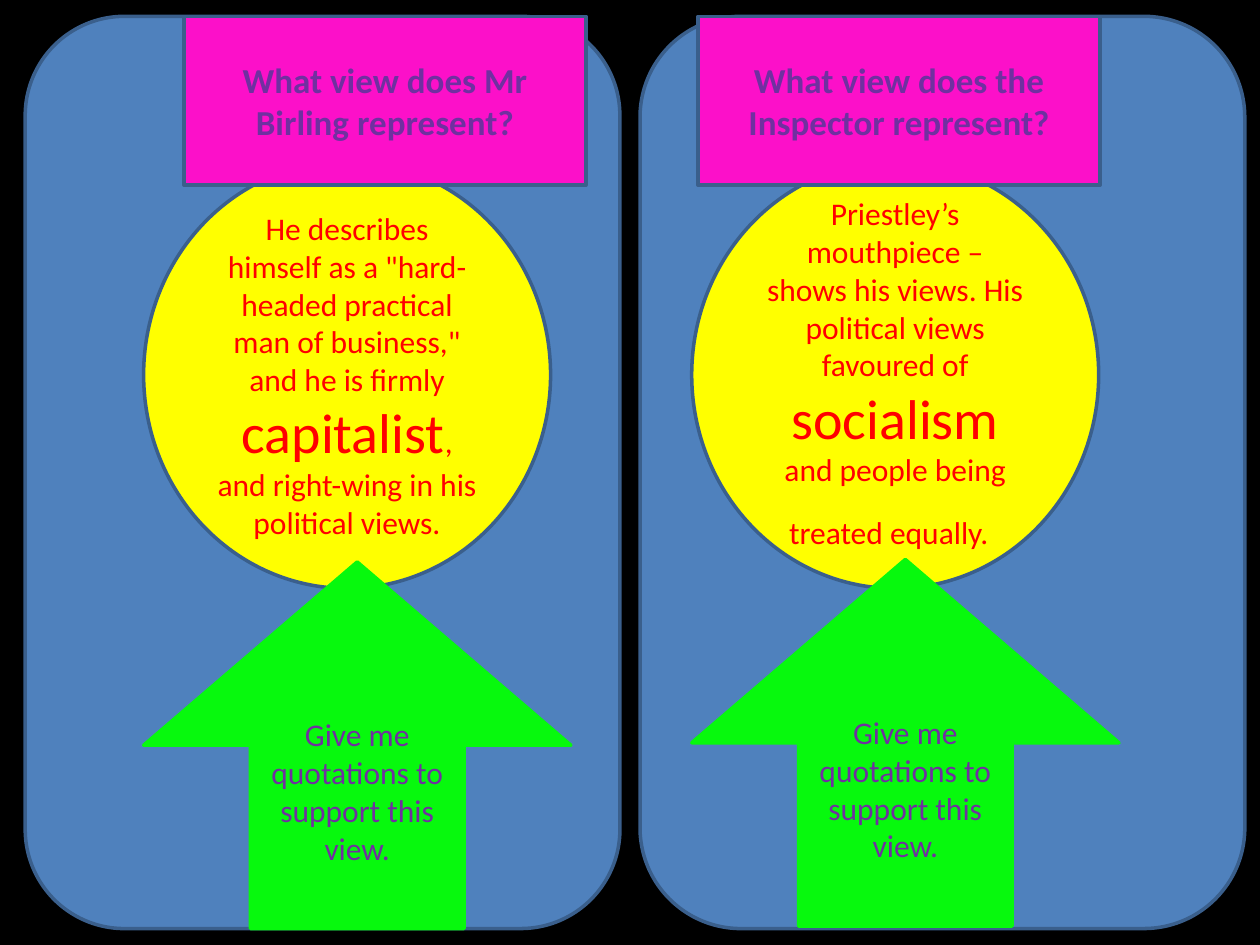
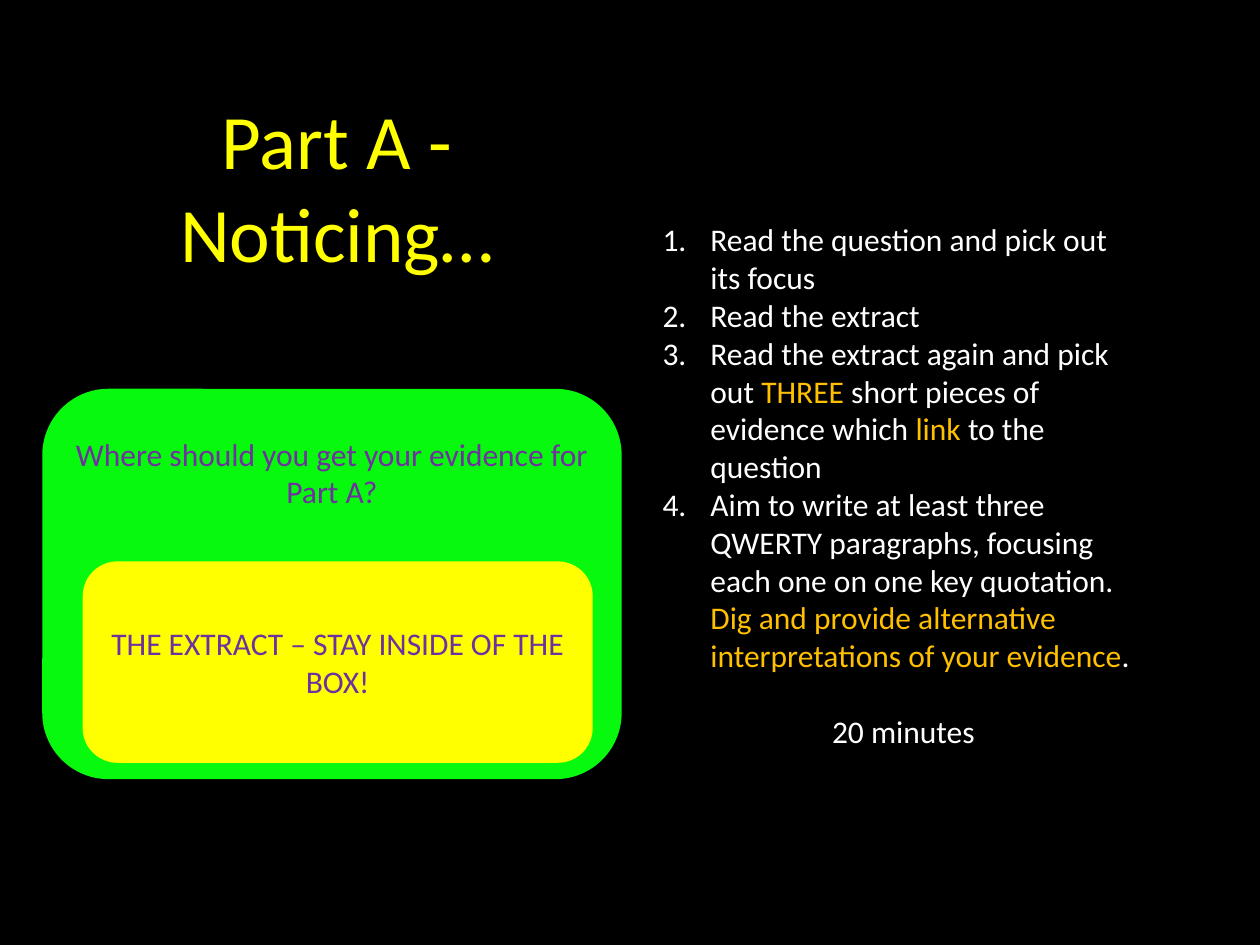
from lxml import etree
from pptx import Presentation
from pptx.dml.color import RGBColor
from pptx.enum.shapes import MSO_SHAPE
from pptx.enum.text import MSO_ANCHOR, PP_ALIGN
from pptx.oxml.ns import qn
from pptx.util import Inches, Pt

ROUND, OVAL = MSO_SHAPE.ROUNDED_RECTANGLE, MSO_SHAPE.OVAL
RECT, UP_ARROW = MSO_SHAPE.RECTANGLE, MSO_SHAPE.UP_ARROW
TOP, MIDDLE = MSO_ANCHOR.TOP, MSO_ANCHOR.MIDDLE
CENTER, LEFT = PP_ALIGN.CENTER, PP_ALIGN.LEFT

FONT = "Calibri"
BLACK, WHITE = "000000", "FFFFFF"
BLUE, OUTLINE = "4F81BD", "3A5F8C"
YELLOW, GREEN, PINK = "FFFF00", "07F90D", "FC10C9"
PURPLE, RED, GOLD = "7030A0", "FF0000", "FFC000"


def rgb(color):
    return RGBColor.from_string(color)


def add_slide(prs):
    s = prs.slides.add_slide(prs.slide_layouts[6])
    s.background.fill.solid()
    s.background.fill.fore_color.rgb = rgb(BLACK)
    return s


def add_run(p, text, color, size=18, bold=False):
    r = p.add_run()
    r.text = text
    r.font.name = FONT
    r.font.size = Pt(size)
    r.font.bold = bold
    r.font.color.rgb = rgb(color)


def add_block(s, kind, box, fill, line=None, anchor=MIDDLE):
    """Add a filled shape and return its one centred paragraph."""
    sp = s.shapes.add_shape(kind, *map(Inches, box))
    sp.shadow.inherit = False
    sp.fill.solid()
    sp.fill.fore_color.rgb = rgb(fill)
    sp.line.color.rgb = rgb(line or fill)
    sp.line.width = Pt(2)
    tf = sp.text_frame
    tf.word_wrap = True
    tf.vertical_anchor = anchor
    p = tf.paragraphs[0]
    p.alignment = CENTER
    return p


def add_text_box(s, box, anchor=TOP):
    tf = s.shapes.add_textbox(*map(Inches, box)).text_frame
    tf.word_wrap = True
    tf.vertical_anchor = anchor
    return tf


def number_paragraph(p):
    pPr = p._p.get_or_add_pPr()
    pPr.set("marL", str(Inches(0.38)))
    pPr.set("indent", str(-Inches(0.38)))
    etree.SubElement(pPr, qn("a:buFont"), typeface="+mj-lt")
    etree.SubElement(pPr, qn("a:buAutoNum"), type="arabicPeriod")


def add_view(s, panel, circle_x, heading_x, arrow_y, question, answer):
    """Add one character's column: panel, answer circle, question and arrow."""
    left, width = panel
    add_block(s, ROUND, (left, 0.13, width, 7.24), BLUE, OUTLINE)
    p = add_block(s, OVAL, (circle_x, 1.28, 3.23, 3.39), YELLOW, OUTLINE)
    for text, size in answer:
        add_run(p, text, RED, size)
    p = add_block(s, RECT, (heading_x, 0.13, 3.19, 1.34), PINK, OUTLINE)
    add_run(p, question, PURPLE, 20, bold=True)
    p = add_block(s, UP_ARROW, (circle_x, arrow_y, 3.39, 2.91), GREEN)
    add_run(p, "Give me quotations to support this view.", PURPLE)


def build_views(prs):
    s = add_slide(prs)
    add_view(s, (0.2, 4.72), 1.14, 1.46, 4.46,
             "What view does Mr Birling represent?",
             [('He describes himself as a "hard-headed practical man of '
               'business," and he is firmly ', 18),
              ("capitalist", 32),
              (", and right-wing in his political views.", 18)])
    add_view(s, (5.08, 4.8), 5.49, 5.54, 4.44,
             "What view does the Inspector represent?",
             [("Priestley’s mouthpiece – shows his views. His political "
               "views favoured of ", 18),
              ("socialism ", 32),
              ("and people being treated equally.", 18),
              (" ", 32)])


def build_part_a(prs):
    s = add_slide(prs)
    p = add_text_box(s, (0.59, 0.29, 4.17, 2.36), MIDDLE).paragraphs[0]
    p.alignment = CENTER
    add_run(p, "Part A -", YELLOW, 44)
    p.add_line_break()
    add_run(p, "Noticing…", YELLOW, 44)

    steps = [
        [("Read the question and pick out its focus", WHITE)],
        [("Read the extract", WHITE)],
        [("Read the extract again and pick out ", WHITE), ("THREE", GOLD),
         (" short pieces of evidence which", WHITE), (" link ", GOLD),
         ("to the question", WHITE)],
        [("Aim to write at least three QWERTY paragraphs, focusing each one "
          "on one key quotation. ", WHITE),
         ("Dig and provide alternative interpretations of your evidence",
          GOLD),
         (".", WHITE)],
    ]
    tf = add_text_box(s, (5.16, 1.7, 4.02, 4.34))
    for i, step in enumerate(steps):
        p = tf.add_paragraph() if i else tf.paragraphs[0]
        p.alignment = LEFT
        number_paragraph(p)
        for text, color in step:
            add_run(p, text, color)
    p = tf.add_paragraph()
    p.alignment = CENTER
    p.space_before = Pt(22)
    add_run(p, "20 minutes", WHITE)

    p = add_block(s, ROUND, (0.35, 3.1, 4.57, 3.07), GREEN, anchor=TOP)
    p.space_before = Pt(0)
    s.shapes[-1].text_frame.margin_top = Inches(0.2)
    add_run(p, "Where should you get your evidence for Part A?", PURPLE)
    p = add_block(s, ROUND, (0.67, 4.47, 4.02, 1.57), YELLOW)
    add_run(p, "THE EXTRACT – STAY INSIDE OF THE BOX!", PURPLE)


def main():
    prs = Presentation()
    prs.slide_width, prs.slide_height = Inches(10), Inches(7.5)
    build_views(prs)
    build_part_a(prs)
    prs.save("out.pptx")


if __name__ == "__main__":
    main()
